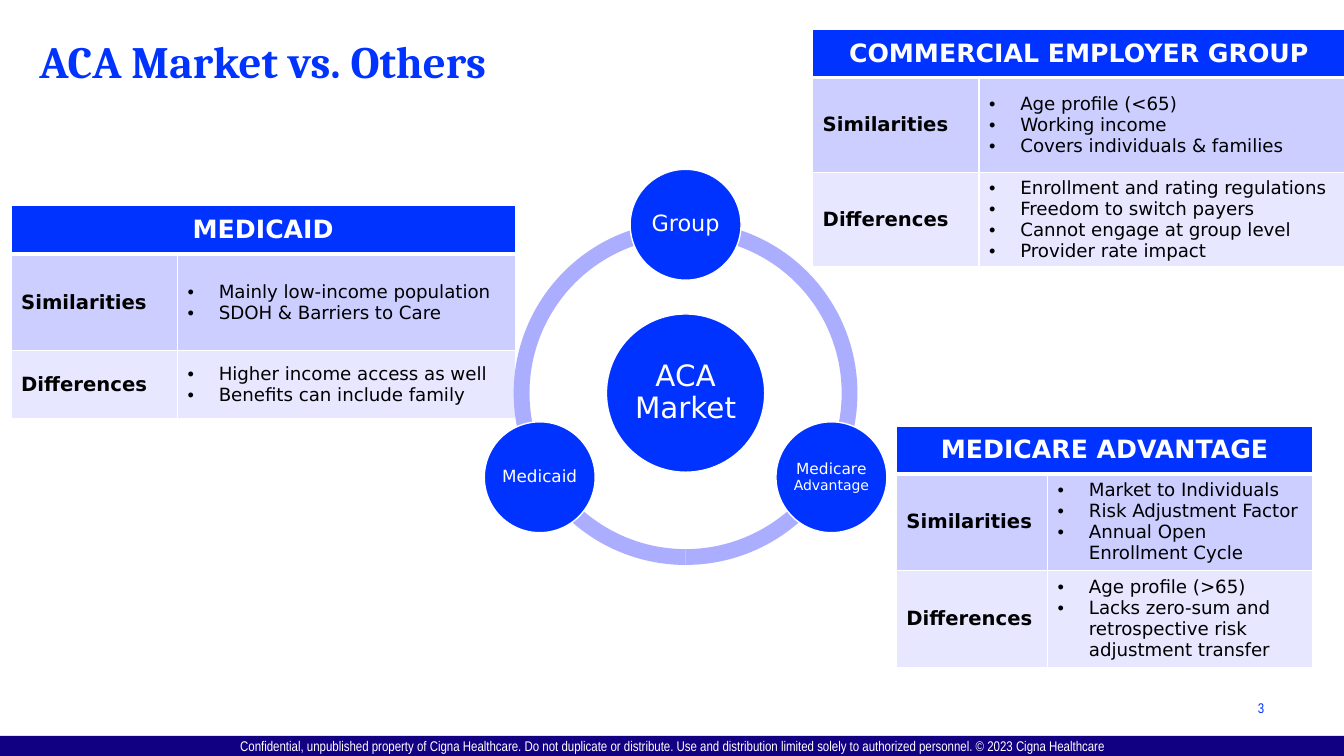
from math import cos, radians, sin

from lxml import etree
from pptx import Presentation
from pptx.dml.color import RGBColor
from pptx.enum.shapes import MSO_SHAPE
from pptx.enum.text import MSO_ANCHOR, MSO_AUTO_SIZE, PP_ALIGN
from pptx.oxml.ns import qn
from pptx.util import Inches, Pt

BLUE = RGBColor(0x00, 0x33, 0xFF)
NAVY = RGBColor(0x11, 0x00, 0x81)
RING = RGBColor(0xAB, 0xAE, 0xFF)
LILAC = RGBColor(0xCC, 0xCE, 0xFF)
PALE = RGBColor(0xE7, 0xE8, 0xFF)
WHITE = RGBColor(0xFF, 0xFF, 0xFF)
BLACK = RGBColor(0x00, 0x00, 0x00)
TOP, MIDDLE, BOTTOM = MSO_ANCHOR.TOP, MSO_ANCHOR.MIDDLE, MSO_ANCHOR.BOTTOM
LEFT, CENTER, RIGHT = PP_ALIGN.LEFT, PP_ALIGN.CENTER, PP_ALIGN.RIGHT
BODY, NARROW, HEADING = "DejaVu Sans", "Arial Narrow", "Cambria"


def style_font(font, name, size, color, bold=False):
    font.name = name
    font.size = Pt(size)
    font.color.rgb = color
    font.bold = bold


def set_frame(frame, anchor):
    frame.word_wrap = True
    frame.auto_size = MSO_AUTO_SIZE.NONE
    frame.vertical_anchor = anchor
    frame.margin_left = frame.margin_right = 0
    frame.margin_top = frame.margin_bottom = 0
    return frame.paragraphs[0]


deck = Presentation()
deck.slide_width = Inches(13.33)
deck.slide_height = Inches(7.5)
slide = deck.slides.add_slide(deck.slide_layouts[5])

title = slide.shapes.title
title.left, title.top = Inches(0.39), Inches(0.39)
title.width, title.height = Inches(12.55), Inches(1.3)
title.text_frame.text = "ACA Market vs. Others"
para = set_frame(title.text_frame, TOP)
para.alignment = LEFT
para.line_spacing = 0.9
style_font(para.font, HEADING, 32, BLUE, True)

footer = slide.shapes.add_shape(
    MSO_SHAPE.RECTANGLE, 0, Inches(7.3), deck.slide_width, Inches(0.2)
)
footer.shadow.inherit = False
footer.fill.solid()
footer.fill.fore_color.rgb = NAVY
footer.line.fill.background()
para = set_frame(footer.text_frame, MIDDLE)
para.text = (
    "Confidential, unpublished property of Cigna Healthcare. "
    "Do not duplicate or distribute. Use and distribution limited solely "
    "to authorized personnel. © 2023 Cigna Healthcare"
)
para.alignment = CENTER
style_font(para.font, NARROW, 10, WHITE)

page_number = slide.shapes.add_textbox(
    Inches(10.81), Inches(6.91), Inches(1.73), Inches(0.2)
)
para = set_frame(page_number.text_frame, BOTTOM)
para.text = "3"
para.alignment = RIGHT
style_font(para.font, NARROW, 10, BLUE)

markets = [
    ("MEDICARE ADVANTAGE", 8.89, 4.23, (1.5, 2.63), (0.47, 0.96, 0.96),
     ["Market to Individuals", "Risk Adjustment Factor",
      "Annual Open Enrollment Cycle"],
     ["Age profile (>65)",
      "Lacks zero-sum and retrospective risk adjustment transfer"]),
    ("COMMERCIAL EMPLOYER GROUP", 8.06, 0.29, (1.65, 3.63), (0.48, 0.94, 0.94),
     ["Age profile (<65)", "Working income", "Covers individuals & families"],
     ["Enrollment and rating regulations", "Freedom to switch payers",
      "Cannot engage at group level", "Provider rate impact"]),
    ("MEDICAID", 0.11, 2.04, (1.65, 3.35), (0.48, 0.96, 0.67),
     ["Mainly low-income population", "SDOH & Barriers to Care"],
     ["Higher income access as well", "Benefits can include family"]),
]
for name, left, top, widths, heights, similarities, differences in markets:
    table = slide.shapes.add_table(
        3, 2, Inches(left), Inches(top), Inches(sum(widths)), Inches(sum(heights))
    ).table
    for column, width in zip(table.columns, widths):
        column.width = Inches(width)
    for row, height, fill in zip(table.rows, heights, (BLUE, LILAC, PALE)):
        row.height = Inches(height)
        for cell in row.cells:
            cell.fill.solid()
            cell.fill.fore_color.rgb = fill
            cell.vertical_anchor = MIDDLE

    for cell in table.rows[0].cells:
        border = etree.Element(qn("a:lnB"), w=str(Pt(3)))
        border_fill = etree.SubElement(border, qn("a:solidFill"))
        etree.SubElement(border_fill, qn("a:srgbClr")).set("val", str(WHITE))
        cell._tc.get_or_add_tcPr().insert(0, border)

    header = table.cell(0, 0)
    header.merge(table.cell(0, 1))
    header.text = name
    para = header.text_frame.paragraphs[0]
    para.alignment = CENTER
    style_font(para.font, BODY, 18, WHITE, True)

    groups = [("Similarities", similarities), ("Differences", differences)]
    for row_index, (label, points) in enumerate(groups, 1):
        label_cell = table.cell(row_index, 0)
        label_cell.text = label
        style_font(label_cell.text_frame.paragraphs[0].font, BODY, 14, BLACK, True)
        points_cell = table.cell(row_index, 1)
        points_cell.text = "\n".join(points)
        for para in points_cell.text_frame.paragraphs:
            properties = para._p.get_or_add_pPr()
            properties.set("marL", str(Inches(0.31)))
            properties.set("indent", str(-Inches(0.31)))
            etree.SubElement(properties, qn("a:buFont")).set("typeface", "Arial")
            etree.SubElement(properties, qn("a:buChar")).set("char", "•")
            style_font(para.font, BODY, 13, BLACK)

center_x, center_y = 6.8, 3.9
ring_size, orbit = 3.41, 1.67
for start, end in [(90, 162), (18, 90), (162, 18)]:
    arc = slide.shapes.add_shape(
        MSO_SHAPE.BLOCK_ARC,
        Inches(center_x - ring_size / 2), Inches(center_y - ring_size / 2),
        Inches(ring_size), Inches(ring_size),
    )
    arc.adjustments[0] = start * 0.6
    arc.adjustments[1] = end * 0.6
    arc.adjustments[2] = 0.046
    arc.shadow.inherit = False
    arc.fill.solid()
    arc.fill.fore_color.rgb = RING
    arc.line.fill.background()

circles = [
    (1.57, 0, 0, [("ACA Market", 21)]),
    (1.1, orbit, -90, [("Group", 16)]),
    (1.1, orbit, 30, [("Medicare ", 11), ("Advantage", 10)]),
    (1.1, orbit, 150, [("Medicaid", 12)]),
]
for size, distance, angle, spans in circles:
    circle = slide.shapes.add_shape(
        MSO_SHAPE.OVAL,
        Inches(center_x + distance * cos(radians(angle)) - size / 2),
        Inches(center_y + distance * sin(radians(angle)) - size / 2),
        Inches(size), Inches(size),
    )
    circle.shadow.inherit = False
    circle.fill.solid()
    circle.fill.fore_color.rgb = BLUE
    circle.line.color.rgb = WHITE
    circle.line.width = Pt(1)
    para = set_frame(circle.text_frame, MIDDLE)
    para.alignment = CENTER
    para.line_spacing = 0.9
    for text, font_size in spans:
        span = para.add_run()
        span.text = text
        style_font(span.font, BODY, font_size, WHITE)

deck.save("out.pptx")
